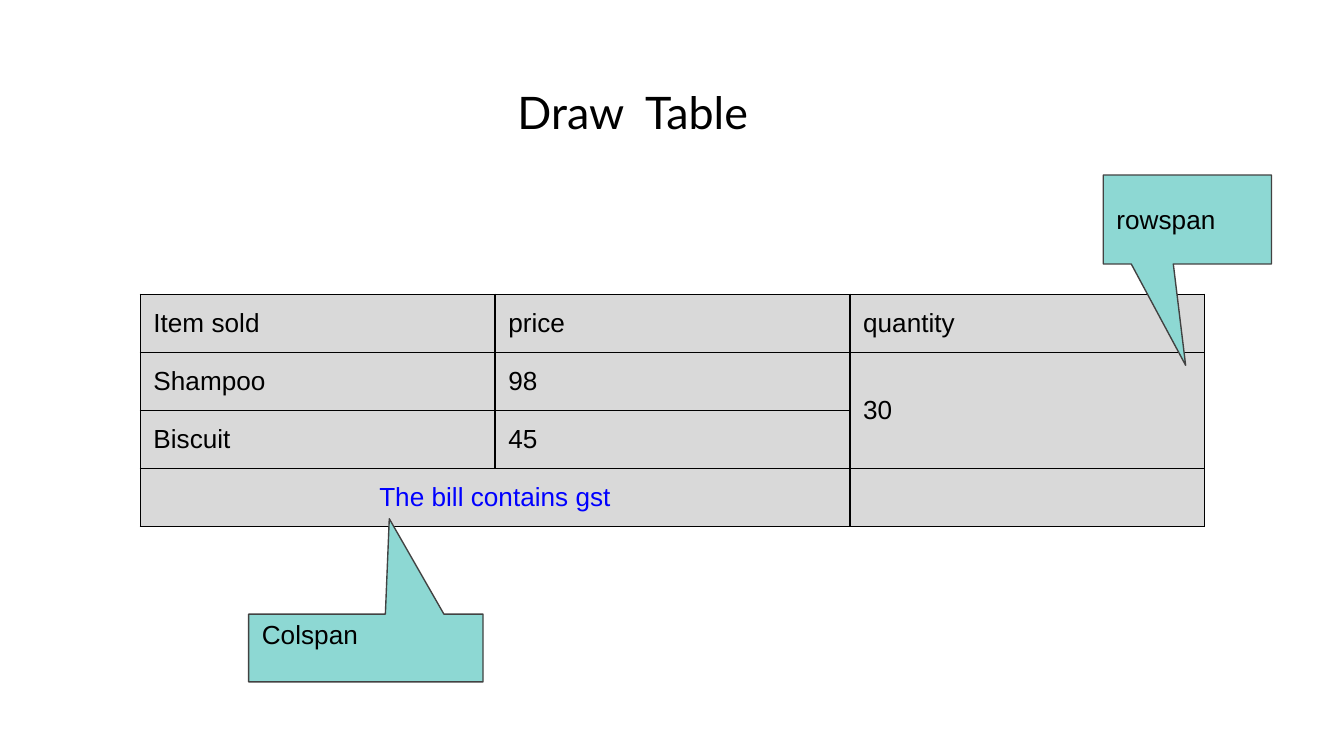
import pptx
import pptx.util
import pptx.dml.color
import pptx.enum.shapes
import pptx.enum.text
import lxml.etree
from pptx.util import Cm

COLORS = {
    "text": "000000",
    "note": "0000FF",
    "cell": "D9D9D9",
    "border": "000000",
    "callout": "8DD8D3",
    "outline": "424242",
}
ANCHOR = pptx.enum.text.MSO_ANCHOR
ALIGN = pptx.enum.text.PP_ALIGN
INSET = Cm(0.25)
ROWS = [
    ["Item sold", "price", "quantity"],
    ["Shampoo", "98", "30"],
    ["Biscuit", "45", ""],
    ["The bill contains gst", "", ""],
]


def color(name):
    return pptx.dml.color.RGBColor.from_string(COLORS[name])


def write(frame, text, size=14, font="Arial", ink="text", align=ALIGN.LEFT):
    frame.text = text
    para = frame.paragraphs[0]
    para.alignment = align
    for span in para.runs:
        span.font.size = pptx.util.Pt(size)
        span.font.name = font
        span.font.color.rgb = color(ink)


def set_insets(frame, top=INSET):
    frame.word_wrap = True
    frame.margin_left = frame.margin_right = frame.margin_bottom = INSET
    frame.margin_top = top


def add_title(page, box, text):
    frame = page.shapes.add_textbox(*box).text_frame
    set_insets(frame)
    write(frame, text, size=24, font="Lato")


def add_borders(cell):
    properties = cell._tc.get_or_add_tcPr()
    namespace = "{http://schemas.openxmlformats.org/drawingml/2006/main}"
    for side in ("lnL", "lnR", "lnT", "lnB"):
        line = lxml.etree.SubElement(properties, namespace + side, w=str(pptx.util.Pt(0.75)))
        fill = lxml.etree.SubElement(line, namespace + "solidFill")
        lxml.etree.SubElement(fill, namespace + "srgbClr", val=COLORS["border"])


def add_bill(page, box):
    table = page.shapes.add_table(len(ROWS), len(ROWS[0]), *box).table
    table.first_row = table.horz_banding = False
    for row_index, row in enumerate(ROWS):
        for column_index, text in enumerate(row):
            cell = table.cell(row_index, column_index)
            add_borders(cell)
            cell.fill.solid()
            cell.fill.fore_color.rgb = color("cell")
            cell.vertical_anchor = ANCHOR.MIDDLE
            cell.margin_left = cell.margin_right = INSET
            cell.margin_top = cell.margin_bottom = INSET if text else 0
            write(cell.text_frame, text)
    table.cell(1, 2).merge(table.cell(2, 2))
    note = table.cell(3, 0)
    note.merge(table.cell(3, 1))
    write(note.text_frame, ROWS[3][0], ink="note", align=ALIGN.CENTER)


def add_callout(page, box, text, tip, anchor=ANCHOR.MIDDLE, top=INSET):
    kind = pptx.enum.shapes.MSO_SHAPE.RECTANGULAR_CALLOUT
    callout = page.shapes.add_shape(kind, *box)
    callout.adjustments[0], callout.adjustments[1] = tip
    callout.shadow.inherit = False
    callout.fill.solid()
    callout.fill.fore_color.rgb = color("callout")
    callout.line.color.rgb = color("outline")
    callout.line.width = pptx.util.Pt(0.75)
    frame = callout.text_frame
    set_insets(frame, top)
    frame.vertical_anchor = anchor
    write(frame, text)


def main():
    deck = pptx.Presentation()
    deck.slide_width, deck.slide_height = Cm(25.4), Cm(14.29)
    page = deck.slides.add_slide(deck.slide_layouts[6])
    add_title(page, (Cm(9.53), Cm(1.35), Cm(8.79), Cm(1.96)), "Draw  Table")
    add_bill(page, (Cm(2.65), Cm(5.56), Cm(20.12), Cm(4.39)))
    add_callout(page, (Cm(4.7), Cm(11.61), Cm(4.43), Cm(1.28)), "Colspan",
                (0.1, -1.91), ANCHOR.TOP, Cm(0.08))
    add_callout(page, (Cm(20.85), Cm(3.31), Cm(3.18), Cm(1.68)), "rowspan", (-0.01, 1.64))
    deck.save("out.pptx")


if __name__ == "__main__":
    main()
